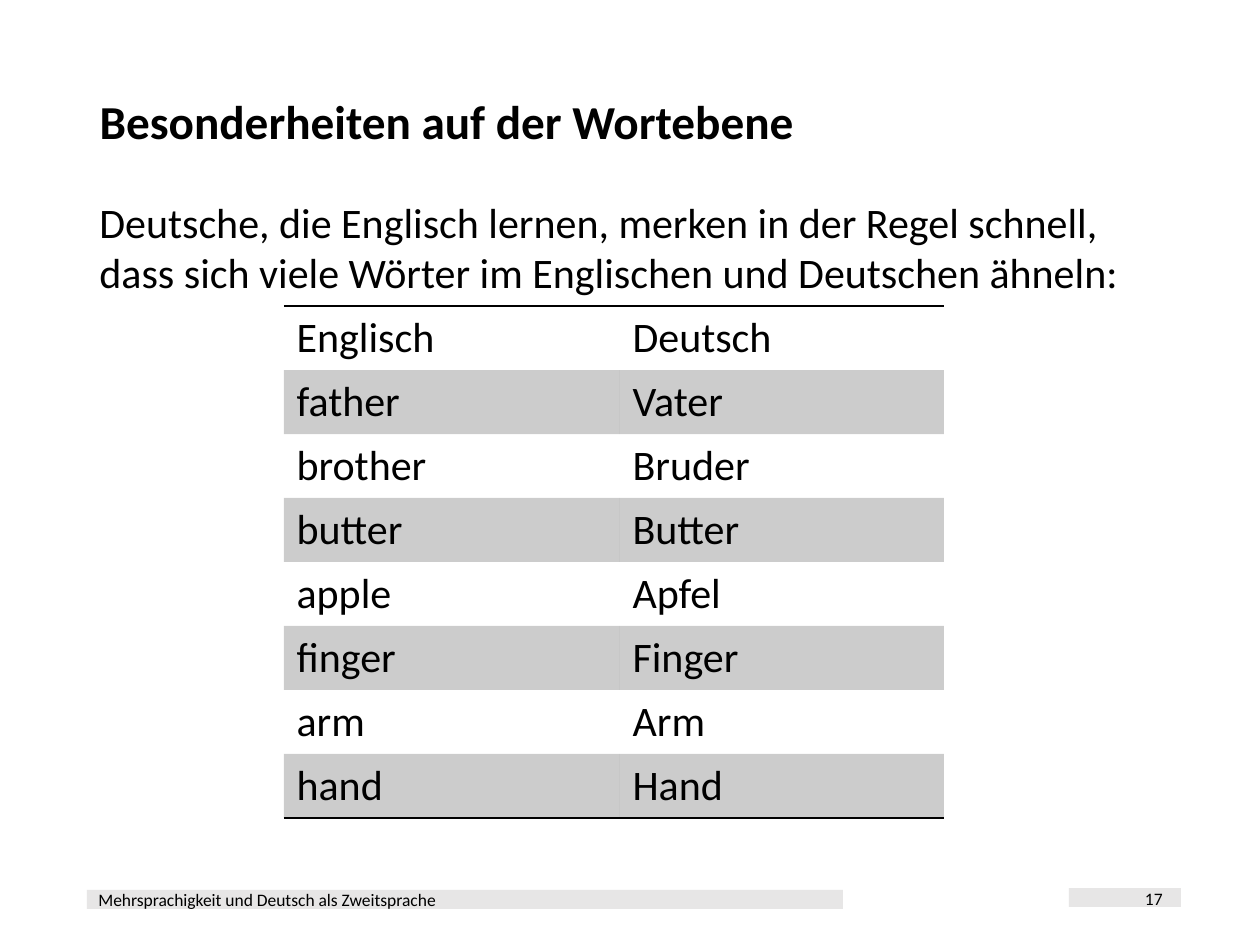
from lxml import etree
from pptx import Presentation
from pptx import util as u
from pptx.dml.color import RGBColor
from pptx.enum import shapes, text
from pptx.oxml.ns import qn

PX = u.Inches(1) / 126
FONT = "Calibri"
COLORS = {"text": "000000", "bar": "E7E6E6", "band": "000000", "rule": "000000"}
BAND_OPACITY = 20
NO_GRID_STYLE = "{2D5ABB26-0587-4C30-8999-92F81FD0307C}"

WORD_PAIRS = [
    ("Englisch", "Deutsch"),
    ("father", "Vater"),
    ("brother", "Bruder"),
    ("butter", "Butter"),
    ("apple", "Apfel"),
    ("finger", "Finger"),
    ("arm", "Arm"),
    ("hand", "Hand"),
]
COLUMN_WIDTHS = (336, 324)
ROW_HEIGHT = 64


def px(*lengths):
    return [u.Emu(round(length * PX)) for length in lengths]


def rgb(name):
    return RGBColor.from_string(COLORS[name])


def write(frame, words, size, bold=False, align=text.PP_ALIGN.LEFT):
    frame.text = words
    paragraph = frame.paragraphs[0]
    paragraph.alignment = align
    font = paragraph.font
    font.name, font.size, font.bold = FONT, u.Pt(size), bold
    font.color.rgb = rgb("text")
    return paragraph


def add_title(slide, words, box):
    title = slide.shapes.title
    title.left, title.top, title.width, title.height = px(*box)
    title.text_frame.vertical_anchor = text.MSO_ANCHOR.MIDDLE
    write(title.text_frame, words, 27, bold=True).line_spacing = 0.9


def add_bar(slide, box):
    bar = slide.shapes.add_shape(shapes.MSO_SHAPE.RECTANGLE, *px(*box))
    bar.shadow.inherit = False
    bar.fill.solid()
    bar.fill.fore_color.rgb = rgb("bar")
    bar.line.fill.background()


def add_text(slide, words, box, size, anchor=text.MSO_ANCHOR.MIDDLE,
             align=text.PP_ALIGN.LEFT):
    frame = slide.shapes.add_textbox(*px(*box)).text_frame
    frame.word_wrap = True
    frame.vertical_anchor = anchor
    write(frame, words, size, align=align)


def add_rule(cell, side):
    properties = cell._tc.get_or_add_tcPr()
    line = etree.SubElement(properties, qn(f"a:ln{side}"), w=str(u.Pt(1)))
    fill = etree.SubElement(line, qn("a:solidFill"))
    etree.SubElement(fill, qn("a:srgbClr"), val=COLORS["rule"])


def fill_band(cell):
    cell.fill.solid()
    cell.fill.fore_color.rgb = rgb("band")
    color = cell._tc.tcPr.find(qn("a:solidFill")).find(qn("a:srgbClr"))
    etree.SubElement(color, qn("a:alpha"), val=str(BAND_OPACITY * 1000))


def add_word_table(slide, left, top):
    last = len(WORD_PAIRS) - 1
    size = (sum(COLUMN_WIDTHS), ROW_HEIGHT * len(WORD_PAIRS))
    frame = slide.shapes.add_table(len(WORD_PAIRS), len(COLUMN_WIDTHS),
                                   *px(left, top, *size))
    table = frame.table
    table.horz_banding = False
    table.first_row = False
    table._tbl.tblPr.find(qn("a:tableStyleId")).text = NO_GRID_STYLE
    for column, width in zip(table.columns, px(*COLUMN_WIDTHS)):
        column.width = width
    for row, pair in enumerate(WORD_PAIRS):
        for column, word in enumerate(pair):
            cell = table.cell(row, column)
            write(cell.text_frame, word, 24)
            # Rules only above and below the whole table
            if row == 0:
                add_rule(cell, "T")
            if row == last:
                add_rule(cell, "B")
            # Every second row is shaded
            if row % 2:
                fill_band(cell)
            else:
                cell.fill.background()


def main():
    presentation = Presentation()
    presentation.slide_width, presentation.slide_height = px(1260, 945)
    slide = presentation.slides.add_slide(presentation.slide_layouts[5])

    # Footer bars
    add_bar(slide, (87, 890, 756, 19))
    add_bar(slide, (1069, 888, 112, 19))

    # Title and introduction
    add_title(slide, "Besonderheiten auf der Wortebene", (87, 73, 1086, 103))
    add_text(slide, "Deutsche, die Englisch lernen, merken in der Regel schnell, "
             "dass sich viele Wörter im Englischen und Deutschen ähneln:",
             (87, 190, 1086, 626), 24, anchor=text.MSO_ANCHOR.TOP)

    # Word comparison
    add_word_table(slide, 284, 306)

    # Footer text
    add_text(slide, "Mehrsprachigkeit und Deutsch als Zweitsprache",
             (86, 889, 757, 20), 10)
    add_text(slide, "17", (1075, 873, 100, 51), 10, align=text.PP_ALIGN.RIGHT)

    presentation.save("out.pptx")


if __name__ == "__main__":
    main()
